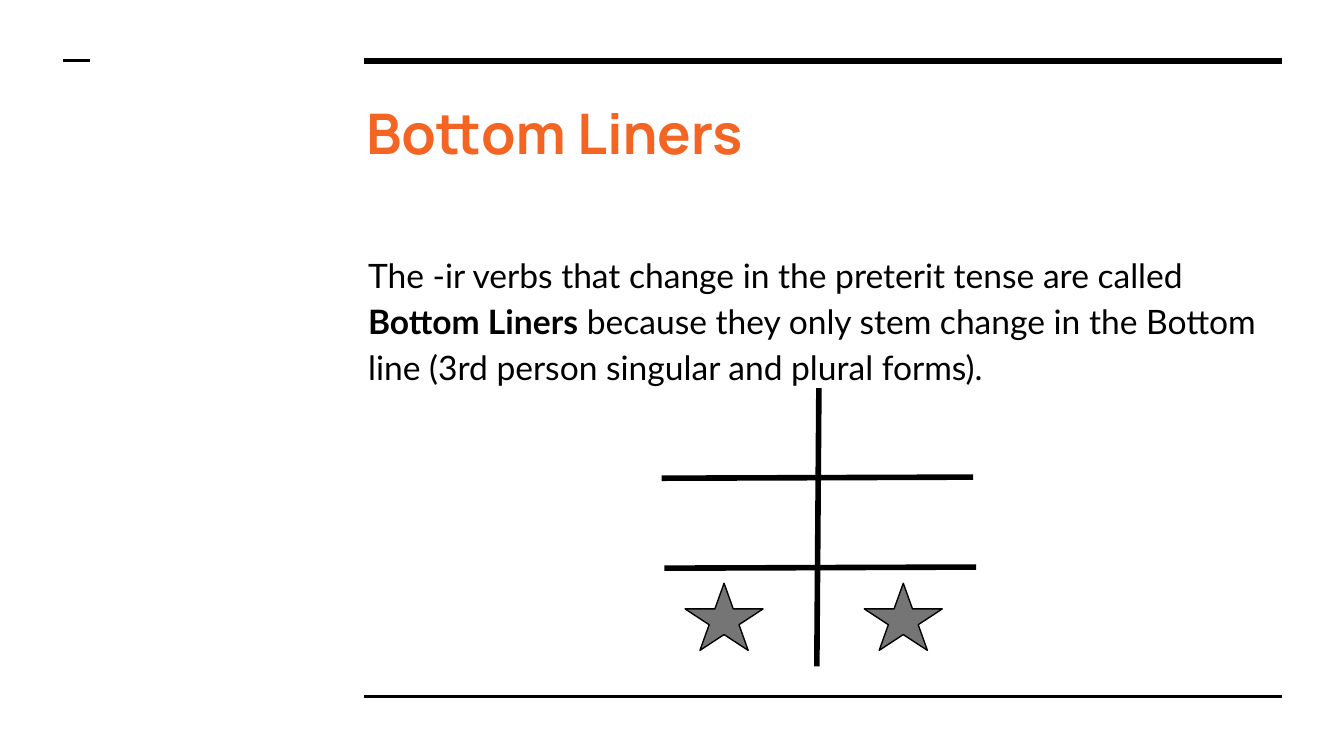
from dataclasses import dataclass

from lxml.etree import SubElement
from pptx import Presentation
from pptx.dml.color import RGBColor
from pptx.enum.shapes import MSO_CONNECTOR, MSO_SHAPE
from pptx.enum.text import MSO_ANCHOR, MSO_AUTO_SIZE, PP_ALIGN
from pptx.oxml.ns import qn
from pptx.shapes.placeholder import SlidePlaceholder
from pptx.slide import Slide
from pptx.text.text import _Paragraph as Paragraph
from pptx.util import Pt

COLORS = {"ink": "000000", "accent": "F46524", "star": "757575"}
INSET = 7.2


@dataclass
class Rule:
    x1: float
    y1: float
    x2: float
    y2: float
    weight: float


@dataclass
class Star:
    left: float
    top: float = 312.5
    width: float = 41.8
    height: float = 36


FRAME = [
    Rule(195.1, 32.6, 687, 32.6, 3),
    Rule(195.1, 373, 687, 373, 1.5),
    Rule(33.6, 32.6, 48.2, 32.6, 1.5),
]
VERB_CHART = [
    Rule(438.7, 208, 437.6, 357, 3),
    Rule(521.3, 255.6, 354.4, 256.2, 3),
    Rule(522.9, 303.8, 356, 304.4, 3),
]
CHANGED_FORMS = [Star(367), Star(463)]


def color(name: str) -> RGBColor:
    return RGBColor.from_string(COLORS[name])


def draw_rule(slide: Slide, rule: Rule) -> None:
    line = slide.shapes.add_connector(
        MSO_CONNECTOR.STRAIGHT, Pt(rule.x1), Pt(rule.y1), Pt(rule.x2), Pt(rule.y2)
    )
    line.line.color.rgb = color("ink")
    line.line.width = Pt(rule.weight)
    SubElement(line._element.spPr, qn("a:effectLst"))


def draw_star(slide: Slide, star: Star) -> None:
    shape = slide.shapes.add_shape(
        MSO_SHAPE.STAR_5_POINT,
        Pt(star.left), Pt(star.top), Pt(star.width), Pt(star.height),
    )
    shape.shadow.inherit = False
    shape.fill.solid()
    shape.fill.fore_color.rgb = color("star")
    shape.line.color.rgb = color("ink")
    shape.line.width = Pt(0.75)


def place(holder: SlidePlaceholder, left: float, top: float,
          width: float, height: float) -> Paragraph:
    holder.left, holder.top = Pt(left), Pt(top)
    holder.width, holder.height = Pt(width), Pt(height)
    frame = holder.text_frame
    frame.word_wrap = True
    frame.auto_size = MSO_AUTO_SIZE.NONE
    frame.vertical_anchor = MSO_ANCHOR.TOP
    frame.margin_left = frame.margin_right = Pt(INSET)
    frame.margin_top = frame.margin_bottom = Pt(INSET)
    paragraph = frame.paragraphs[0]
    paragraph.alignment = PP_ALIGN.LEFT
    paragraph.space_before = Pt(0)
    return paragraph


def style(paragraph: Paragraph, font: str, size: float, color_name: str) -> None:
    paragraph.font.name = font
    paragraph.font.size = Pt(size)
    paragraph.font.color.rgb = color(color_name)


def main() -> None:
    deck = Presentation()
    deck.slide_width, deck.slide_height = Pt(720), Pt(405)
    slide = deck.slides.add_slide(deck.slide_layouts[1])

    heading = place(slide.shapes.title, 188.9, 45.4, 497.5, 49.7)
    heading.text = "Bottom Liners"
    style(heading, "Manrope", 30, "accent")
    heading.font.bold = True

    definition = place(slide.placeholders[1], 190, 126, 497.5, 82)
    for words, bold in [
        ("The -ir verbs that change in the preterit tense are called ", False),
        ("Bottom Liners", True),
        (" because they only stem change in the Bottom line "
         "(3rd person singular and plural forms).", False),
    ]:
        run = definition.add_run()
        run.text = words
        run.font.bold = bold
    style(definition, "Lato", 18, "ink")
    definition.line_spacing = 1.15
    definition.space_after = Pt(16)
    properties = definition._p.get_or_add_pPr()
    properties.set("marL", "0")
    properties.set("indent", "0")
    properties.insert_element_before(
        properties.makeelement(qn("a:buNone")), "a:tabLst", "a:defRPr", "a:extLst"
    )

    for rule in FRAME + VERB_CHART:
        draw_rule(slide, rule)
    for star in CHANGED_FORMS:
        draw_star(slide, star)

    deck.save("out.pptx")


if __name__ == "__main__":
    main()
